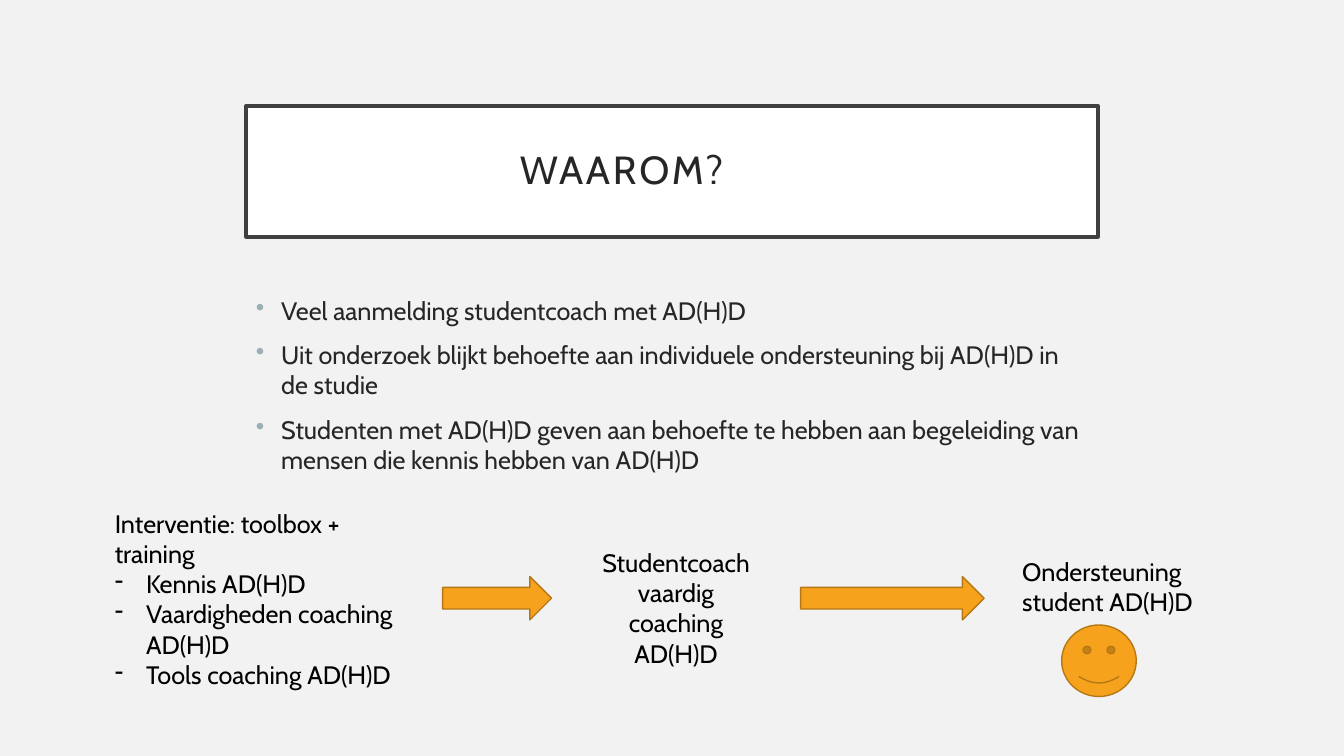
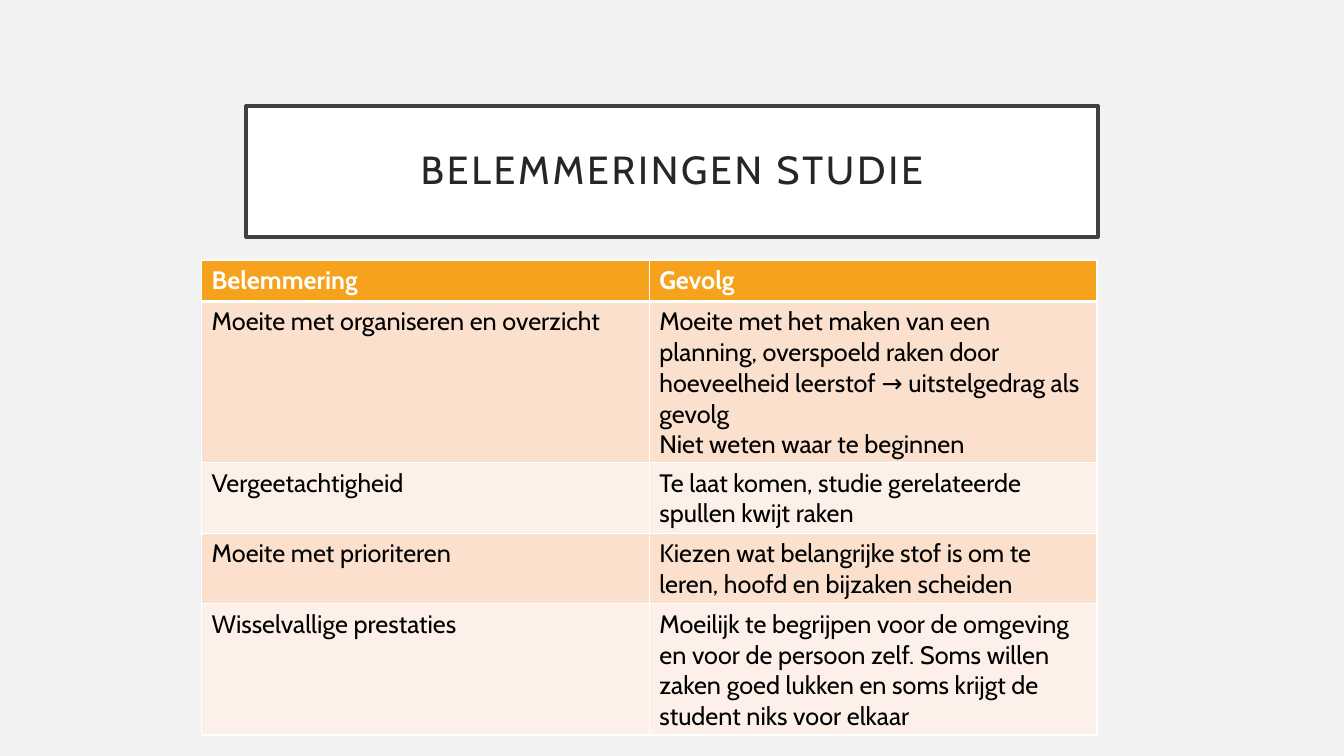
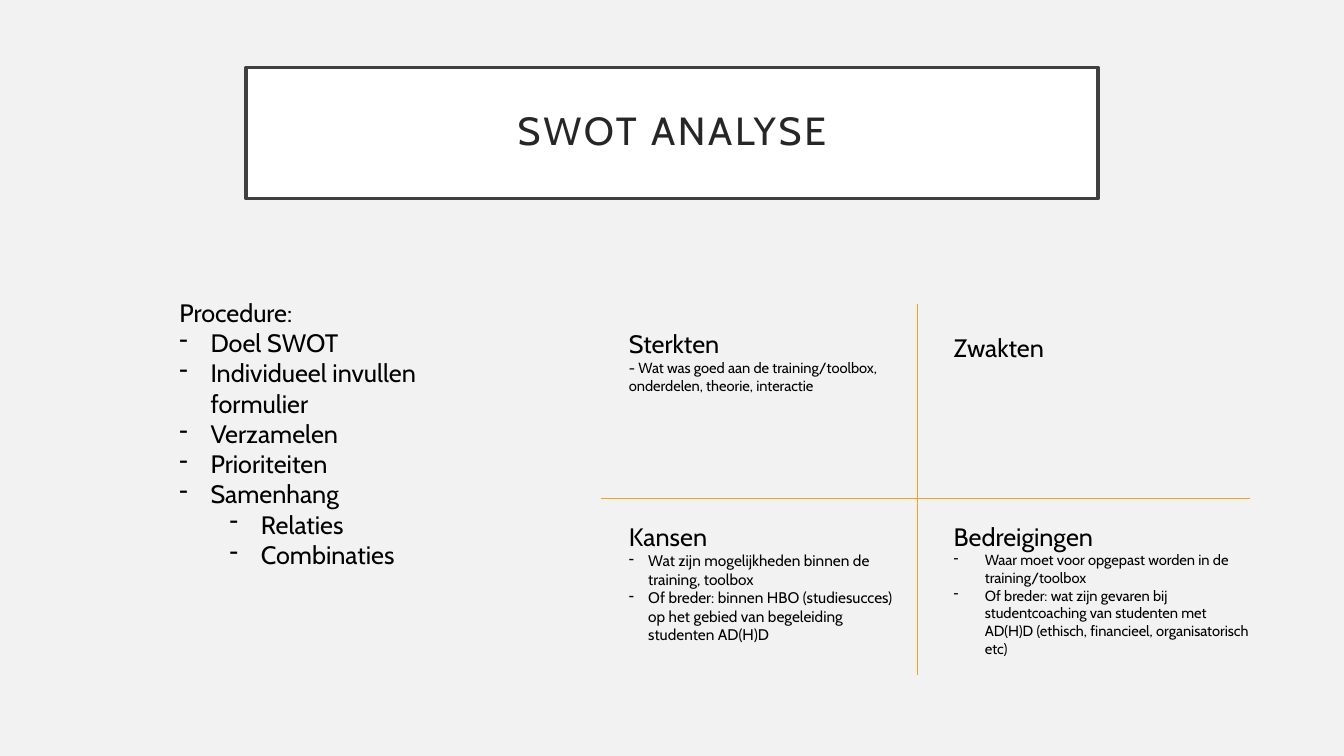
from lxml import etree
from pptx import Presentation
from pptx.dml.color import RGBColor
from pptx.enum.shapes import MSO_CONNECTOR, MSO_SHAPE as SHAPE
from pptx.enum.text import MSO_ANCHOR as ANCHOR, MSO_AUTO_SIZE as AUTO, PP_ALIGN as ALIGN
from pptx.oxml.ns import qn
from pptx.util import Inches, Pt

BACKGROUND = RGBColor(0xF2, 0xF2, 0xF2)
WHITE = RGBColor(0xFF, 0xFF, 0xFF)
BLACK = RGBColor(0, 0, 0)
INK = RGBColor(0x26, 0x26, 0x26)
FRAME = RGBColor(0x40, 0x40, 0x40)
ORANGE = RGBColor(0xF6, 0xA2, 0x1D)
DARK_ORANGE = RGBColor(0xB6, 0x78, 0x15)
BAND_DARK = RGBColor(0xFB, 0xE0, 0xCD)
BAND_LIGHT = RGBColor(0xFD, 0xF0, 0xE8)
BULLET = RGBColor(0x9B, 0xAF, 0xB5)
FONT = "Cabin"


def write(tf, text, *, size=18, color=BLACK, bold=False, align=None, line_spacing=None,
          before=None, spacing=None, bullet=None, bullet_color=None, hang=0.31, level=0):
    """Add one paragraph, filling the first one if it is still empty."""
    p = tf.paragraphs[0] if not tf.text else tf.add_paragraph()
    p.alignment, p.line_spacing, p.level = align, line_spacing, level
    if before is not None:
        p.space_before = Pt(before)
    r = p.add_run()
    r.text = text
    r.font.name, r.font.size, r.font.bold = FONT, Pt(size), bold
    r.font.color.rgb = color
    if spacing:
        r.font._element.set("spc", str(spacing * 100))
    if bullet:
        pPr = p._p.get_or_add_pPr()
        pPr.set("marL", str(Inches(hang + 0.5 * level)))
        pPr.set("indent", str(-Inches(hang)))
        if bullet_color:
            bu_clr = etree.SubElement(pPr, qn("a:buClr"))
            etree.SubElement(bu_clr, qn("a:srgbClr"), val=str(bullet_color))
        etree.SubElement(pPr, qn("a:buChar"), char=bullet)


class Deck:
    """Holds the shared style and the current slide."""

    def __init__(self):
        self.prs = Presentation()
        self.prs.slide_width, self.prs.slide_height = Inches(13.33), Inches(7.5)
        self.s = None

    def slide(self, title, top=1.05, right_inset=0.2):
        self.s = self.prs.slides.add_slide(self.prs.slide_layouts[6])
        self.s.background.fill.solid()
        self.s.background.fill.fore_color.rgb = BACKGROUND
        sp = self.shape(SHAPE.RECTANGLE, 2.44, top, 8.45, 1.3, WHITE, FRAME, 2.5)
        tf = sp.text_frame
        tf.word_wrap, tf.vertical_anchor = True, ANCHOR.MIDDLE
        tf.margin_left = tf.margin_top = tf.margin_bottom = Inches(0.2)
        tf.margin_right = Inches(right_inset)
        write(tf, title, size=28, color=INK, align=ALIGN.CENTER, line_spacing=0.9, spacing=2)

    def shape(self, kind, x, y, w, h, fill=ORANGE, line=DARK_ORANGE, width=1):
        sp = self.s.shapes.add_shape(kind, Inches(x), Inches(y), Inches(w), Inches(h))
        sp.shadow.inherit = False
        sp.fill.solid()
        sp.fill.fore_color.rgb = fill
        sp.line.color.rgb = line
        sp.line.width = Pt(width)
        return sp

    def text(self, x, y, w, h, heading=None, items=(), grow=True, align=None, **item_format):
        """Text box: an optional heading, then items as text or (text, level)."""
        box = self.s.shapes.add_textbox(Inches(x), Inches(y), Inches(w), Inches(h))
        tf = box.text_frame
        tf.word_wrap = True
        tf.auto_size = AUTO.SHAPE_TO_FIT_TEXT if grow else AUTO.NONE
        if heading:
            write(tf, heading, align=align)
        for item in items:
            label, level = (item, 0) if isinstance(item, str) else item
            write(tf, label, level=level, **item_format)

    def line(self, x1, y1, x2, y2):
        c = self.s.shapes.add_connector(MSO_CONNECTOR.STRAIGHT, Inches(x1), Inches(y1),
                                        Inches(x2), Inches(y2))
        c.line.color.rgb = ORANGE
        c.line.width = Pt(0.5)
        etree.SubElement(c._element.spPr, qn("a:effectLst"))

    def table(self, x, y, col_width, row_height, rows):
        n_rows, n_cols = len(rows), len(rows[0])
        t = self.s.shapes.add_table(n_rows, n_cols, Inches(x), Inches(y),
                                    Inches(col_width * n_cols),
                                    Inches(row_height * n_rows)).table
        for i, row in enumerate(rows):
            header = i == 0
            fill = ORANGE if header else (BAND_LIGHT, BAND_DARK)[i % 2]
            for j, content in enumerate(row):
                cell = t.cell(i, j)
                cell.fill.solid()
                cell.fill.fore_color.rgb = fill
                self.borders(cell, top=3 if i == 1 else 1, bottom=3 if header else 1)
                for part in content.split("\n"):
                    write(cell.text_frame, part, bold=header, color=WHITE if header else BLACK)

    @staticmethod
    def borders(cell, top, bottom):
        tcPr = cell._tc.get_or_add_tcPr()
        for k, (side, width) in enumerate((("L", 1), ("R", 1), ("T", top), ("B", bottom))):
            ln = etree.Element(qn("a:ln" + side), w=str(Pt(width)))
            solid = etree.SubElement(ln, qn("a:solidFill"))
            etree.SubElement(solid, qn("a:srgbClr"), val=str(WHITE))
            tcPr.insert(k, ln)


def main():
    d = Deck()

    # Why: reasons, then the chain from intervention to support
    d.slide("WAAROM?", right_inset=1.2)
    d.text(2.44, 2.88, 8.45, 3.39, items=[
        "Veel aanmelding studentcoach met AD(H)D",
        "Uit onderzoek blijkt behoefte aan individuele ondersteuning bij AD(H)D in de studie",
        "Studenten met AD(H)D geven aan behoefte te hebben aan begeleiding van mensen die "
        "kennis hebben van AD(H)D",
    ], grow=False, color=INK, before=10, bullet="•", bullet_color=BULLET, hang=0.25)
    d.text(1.04, 4.99, 3.25, 1.62, "Interventie: toolbox + training",
           ["Kennis AD(H)D", "Vaardigheden coaching AD(H)D", "Tools coaching AD(H)D"], bullet="-")
    d.text(5.86, 5.38, 1.69, 1.31, "Studentcoach vaardig coaching AD(H)D", align=ALIGN.CENTER)
    d.text(10.04, 5.47, 2.25, 0.71, "Ondersteuning student AD(H)D")
    for x, w in ((4.39, 1.08), (7.94, 1.82)):
        d.shape(SHAPE.RIGHT_ARROW, x, 5.72, w, 0.43)
    d.shape(SHAPE.SMILEY_FACE, 10.53, 6.2, 0.74, 0.71)

    # Obstacles and their consequences
    d.slide("BELEMMERINGEN STUDIE")
    d.table(2, 2.58, 4.44, 0.41, [
        ("Belemmering", "Gevolg"),
        ("Moeite met organiseren en overzicht",
         "Moeite met het maken van een planning, overspoeld raken door hoeveelheid leerstof → "
         "uitstelgedrag als gevolg\nNiet weten waar te beginnen"),
        ("Vergeetachtigheid", "Te laat komen, studie gerelateerde spullen kwijt raken"),
        ("Moeite met prioriteren",
         "Kiezen wat belangrijke stof is om te leren, hoofd en bijzaken scheiden"),
        ("Wisselvallige prestaties",
         "Moeilijk te begrijpen voor de omgeving en voor de persoon zelf. Soms willen zaken "
         "goed lukken en soms krijgt de student niks voor elkaar"),
    ])

    # SWOT: quadrants on the right, procedure on the left
    d.slide("SWOT ANALYSE", top=0.67)
    d.line(5.96, 4.94, 12.4, 4.94)
    d.line(9.1, 3.02, 9.1, 6.7)
    d.text(6.14, 3.21, 2.7, 0.76, "Sterkten",
           ["- Wat was goed aan de training/toolbox, onderdelen, theorie, interactie"], size=10.5)
    d.text(9.36, 3.25, 1.47, 0.4, "Zwakten")
    d.text(6.14, 5.12, 2.84, 1.33, "Kansen", [
        "Wat zijn mogelijkheden binnen de training, toolbox",
        "Of breder: binnen HBO (studiesucces) op het gebied van begeleiding studenten AD(H)D",
    ], size=11, bullet="-", hang=0.19)
    d.text(9.36, 5.12, 3.17, 1.29, "Bedreigingen", [
        "Waar moet voor opgepast worden in de training/toolbox",
        "Of breder: wat zijn gevaren bij studentcoaching van studenten met AD(H)D (ethisch, "
        "financieel, organisatorisch etc)",
    ], size=10.5, bullet="-")
    d.text(1.68, 2.9, 3.18, 3.13, "Procedure:", [
        "Doel SWOT", "Individueel invullen formulier", "Verzamelen", "Prioriteiten",
        "Samenhang", ("Relaties", 1), ("Combinaties", 1),
    ], bullet="-")

    d.prs.save("out.pptx")


if __name__ == "__main__":
    main()
